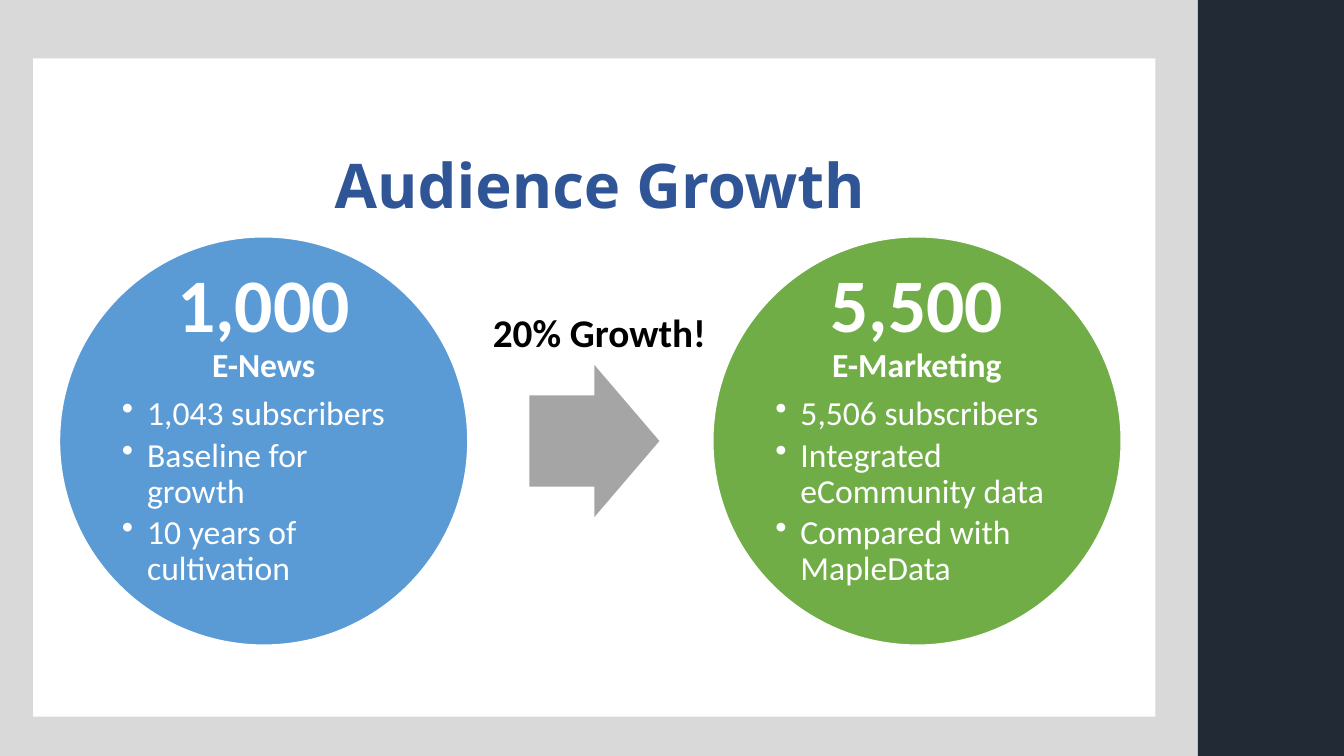
"""Build the Audience Growth slide: two audience circles joined by an arrow."""
from lxml import etree
from pptx import Presentation
from pptx.dml.color import RGBColor
from pptx.enum import shapes, text
from pptx.oxml import ns
from pptx.util import Inches, Pt

TITLE = "Audience Growth"
GROWTH = "20% Growth!"
PANELS = [
    (0, 0, 11.88, 7.5, "D9D9D9"),
    (0.33, 0.58, 11.13, 6.53, "FFFFFF"),
    (11.88, 0, 1.46, 7.5, "222A35"),
]
AUDIENCES = [
    ("1,000", "E-News", "5B9BD5",
     ["1,043 subscribers", "Baseline for growth", "10 years of cultivation"]),
    ("5,500", "E-Marketing", "70AD47",
     ["5,506 subscribers", "Integrated eCommunity data", "Compared with MapleData"]),
]
LEFT, TOP, DIAMETER, STEP = 0.59, 2.35, 4.05, 6.48
INSET = 0.59
WHITE = "FFFFFF"
SHAPE = shapes.MSO_SHAPE
CENTER = text.PP_ALIGN.CENTER


def rgb(value):
    return RGBColor.from_string(value)


def add_filled(s, kind, box, color, outline=None):
    sp = s.shapes.add_shape(kind, *map(Inches, box))
    sp.shadow.inherit = False
    sp.fill.solid()
    sp.fill.fore_color.rgb = rgb(color)
    if outline:
        sp.line.color.rgb = rgb(outline)
        sp.line.width = Pt(1)
    else:
        sp.line.fill.background()
    return sp


def style(p, size, color, bold=False, name="Calibri"):
    for r in p.runs:
        r.font.size = Pt(size)
        r.font.bold = bold
        r.font.name = name
        r.font.color.rgb = rgb(color)


def add_label(s, box, label, size, color, wrap=True):
    tf = s.shapes.add_textbox(*map(Inches, box)).text_frame
    tf.word_wrap = wrap
    tf.text = label
    tf.paragraphs[0].alignment = CENTER
    style(tf.paragraphs[0], size, color, bold=True)


def add_bullet(p):
    pPr = p._p.get_or_add_pPr()
    pPr.set("marL", str(Inches(0.25)))
    pPr.set("indent", str(-Inches(0.25)))
    etree.SubElement(pPr, ns.qn("a:buChar")).set("char", "•")


def add_details(s, box, heading, points):
    tf = s.shapes.add_textbox(*map(Inches, box)).text_frame
    tf.word_wrap = True
    tf.margin_left = tf.margin_right = tf.margin_top = tf.margin_bottom = Inches(0.03)
    tf.text = "\n".join([heading] + points)
    for i, p in enumerate(tf.paragraphs):
        if i:
            add_bullet(p)
            p.level = 1
        else:
            p.alignment = CENTER
        p.line_spacing = 0.9
        p.space_after = Pt(3.6 if i else 8.4)
        style(p, 24, WHITE, bold=i == 0)


def main():
    prs = Presentation()
    prs.slide_width, prs.slide_height = Inches(13.33), Inches(7.5)
    s = prs.slides.add_slide(prs.slide_layouts[5])

    for *box, color in PANELS:
        add_filled(s, SHAPE.RECTANGLE, box, color)

    title = s.shapes.title
    title.element.getparent().append(title.element)
    title.left, title.top, title.width, title.height = map(Inches, (0.68, 1.24, 10.54, 1.26))
    tf = title.text_frame
    tf.text = TITLE
    tf.vertical_anchor = text.MSO_ANCHOR.MIDDLE
    p = tf.paragraphs[0]
    p.alignment = CENTER
    p.line_spacing = 0.9
    style(p, 44, "2F5597", bold=True, name="Noto Sans")

    for i, (count, heading, color, points) in enumerate(AUDIENCES):
        x = LEFT + i * STEP
        add_filled(s, SHAPE.OVAL, (x, TOP, DIAMETER, DIAMETER), color, WHITE)
        add_details(s, (x + INSET, 3.43, DIAMETER - 2 * INSET, 2.38), heading, points)
        add_label(s, (x + 1.06, 2.5, 1.93, 1.01), count, 54, WHITE, wrap=False)

    arrow = add_filled(s, SHAPE.RIGHT_ARROW, (5.25, 3.62, 1.29, 1.51), "A5A5A5")
    arrow.adjustments[0], arrow.adjustments[1] = 0.6, 0.5
    add_label(s, (4.17, 3.01, 3.55, 0.57), GROWTH, 28, "000000")
    prs.save("out.pptx")


if __name__ == "__main__":
    main()
